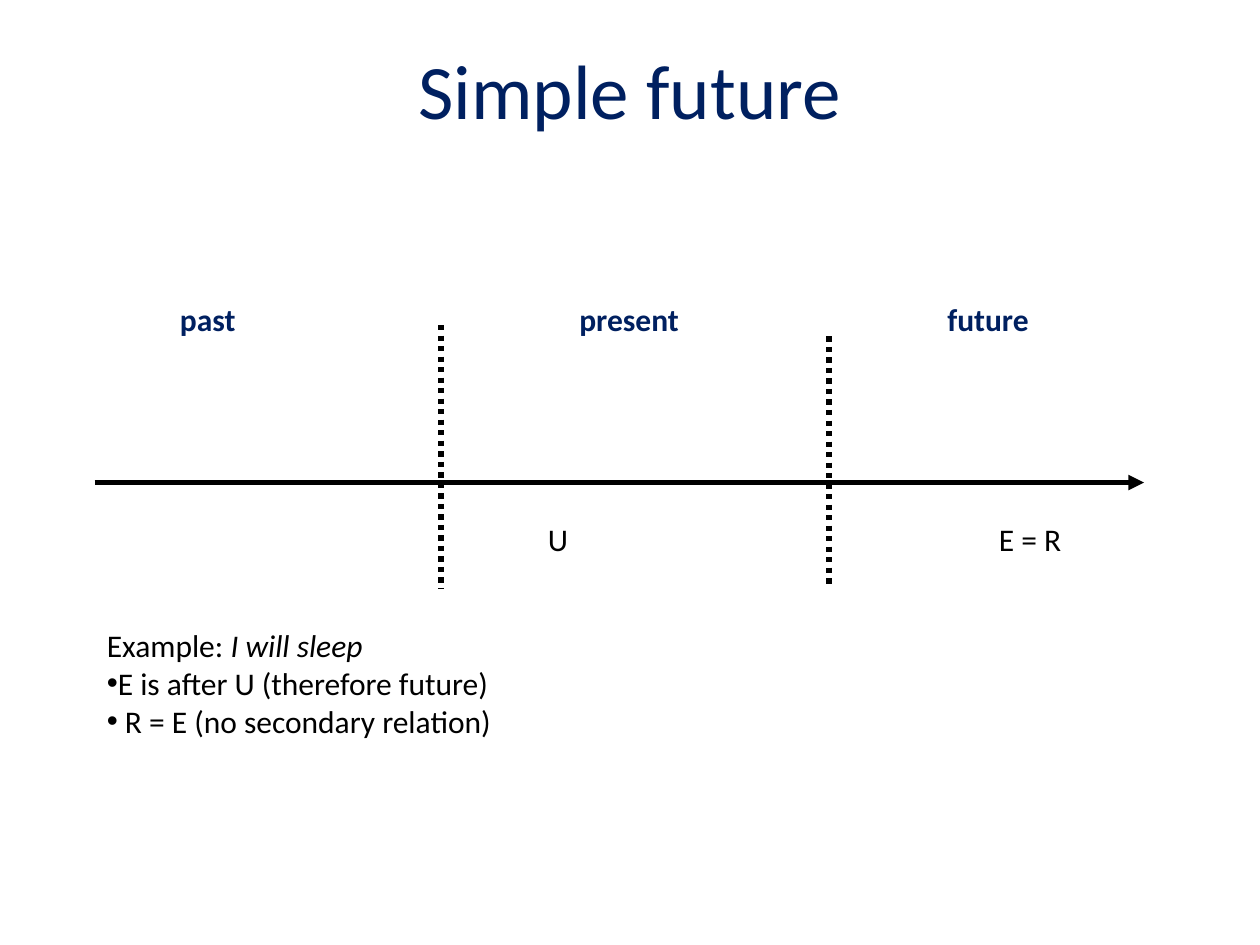
from lxml.etree import SubElement
from pptx import Presentation
from pptx.dml.color import RGBColor
from pptx.enum.dml import MSO_LINE_DASH_STYLE as Dash
from pptx.enum.shapes import MSO_CONNECTOR as Connector
from pptx.enum.text import MSO_ANCHOR as Anchor, PP_ALIGN as Align
from pptx.oxml.ns import qn
from pptx.util import Inches, Pt

NAVY = RGBColor(0x00, 0x20, 0x60)
BLACK = RGBColor(0x00, 0x00, 0x00)
FONT = "Calibri"


def add_text(page, box, paragraphs, size=18, color=BLACK, bold=False,
             align=Align.LEFT, anchor=Anchor.TOP, wrap=False):
    """Each paragraph is (bulleted, [(text, italic), ...]); a string is one plain paragraph."""
    if isinstance(paragraphs, str):
        paragraphs = [(False, [(paragraphs, False)])]
    frame = page.shapes.add_textbox(*map(Inches, box)).text_frame
    frame.word_wrap = wrap
    frame.vertical_anchor = anchor
    for index, (bulleted, spans) in enumerate(paragraphs):
        para = frame.add_paragraph() if index else frame.paragraphs[0]
        para.alignment = align
        if bulleted:
            properties = para._p.get_or_add_pPr()
            SubElement(properties, qn("a:buFont"), typeface="Arial")
            SubElement(properties, qn("a:buChar"), char="•")
        for text, italic in spans:
            span = para.add_run()
            span.text = text
            font = span.font
            font.name, font.size, font.bold, font.italic = FONT, Pt(size), bold, italic
            font.color.rgb = color


def add_line(page, start, end, dash=None, arrow=False):
    line = page.shapes.add_connector(Connector.STRAIGHT, *map(Inches, start + end))
    line.line.color.rgb = BLACK
    line.line.width = Pt(3)
    if dash:
        line.line.dash_style = dash
    if arrow:
        SubElement(line.line._get_or_add_ln(), qn("a:tailEnd"), type="triangle")
    SubElement(line._element.spPr, qn("a:effectLst"))


def add_timeline(page, box):
    left, top, width, height = box
    axis = top + 1.5
    add_line(page, (left, axis), (left + width, axis), arrow=True)

    # Dotted borders between the periods
    for offset, drop in ((2.75, 0.25), (5.83, 0.34)):
        add_line(page, (left + offset, top + drop),
                 (left + offset, top + height), dash=Dash.ROUND_DOT)

    # Period names above the axis
    for name, offset, label_width in (("past", 0.58, 0.65), ("present", 3.75, 1),
                                      ("future", 6.67, 0.85)):
        add_text(page, (left + offset, top, label_width, 0.4), name,
                 color=NAVY, bold=True)

    # Time points below the axis
    for name, offset, label_width in (("U", 3.5, 0.38), ("E = R", 7.08, 0.91)):
        add_text(page, (left + offset, axis + 0.25, label_width, 0.4), name)


def add_example(page, box):
    add_text(page, box, [
        (False, [("Example: ", False), ("I will sleep", True)]),
        (True, [("E is after U (therefore future)", False)]),
        (True, [(" R = E (no secondary relation)", False)]),
    ], wrap=True)


def main():
    deck = Presentation()
    deck.slide_width, deck.slide_height = Inches(10), Inches(7.5)
    page = deck.slides.add_slide(deck.slide_layouts[6])
    add_text(page, (0.5, 0.08, 9, 1.25), "Simple future", size=44, color=NAVY,
             align=Align.CENTER, anchor=Anchor.MIDDLE, wrap=True)
    add_timeline(page, (0.75, 2.33, 8.33, 2.34))
    add_example(page, (0.75, 4.92, 4.17, 1.3))
    deck.save("out.pptx")


if __name__ == "__main__":
    main()
